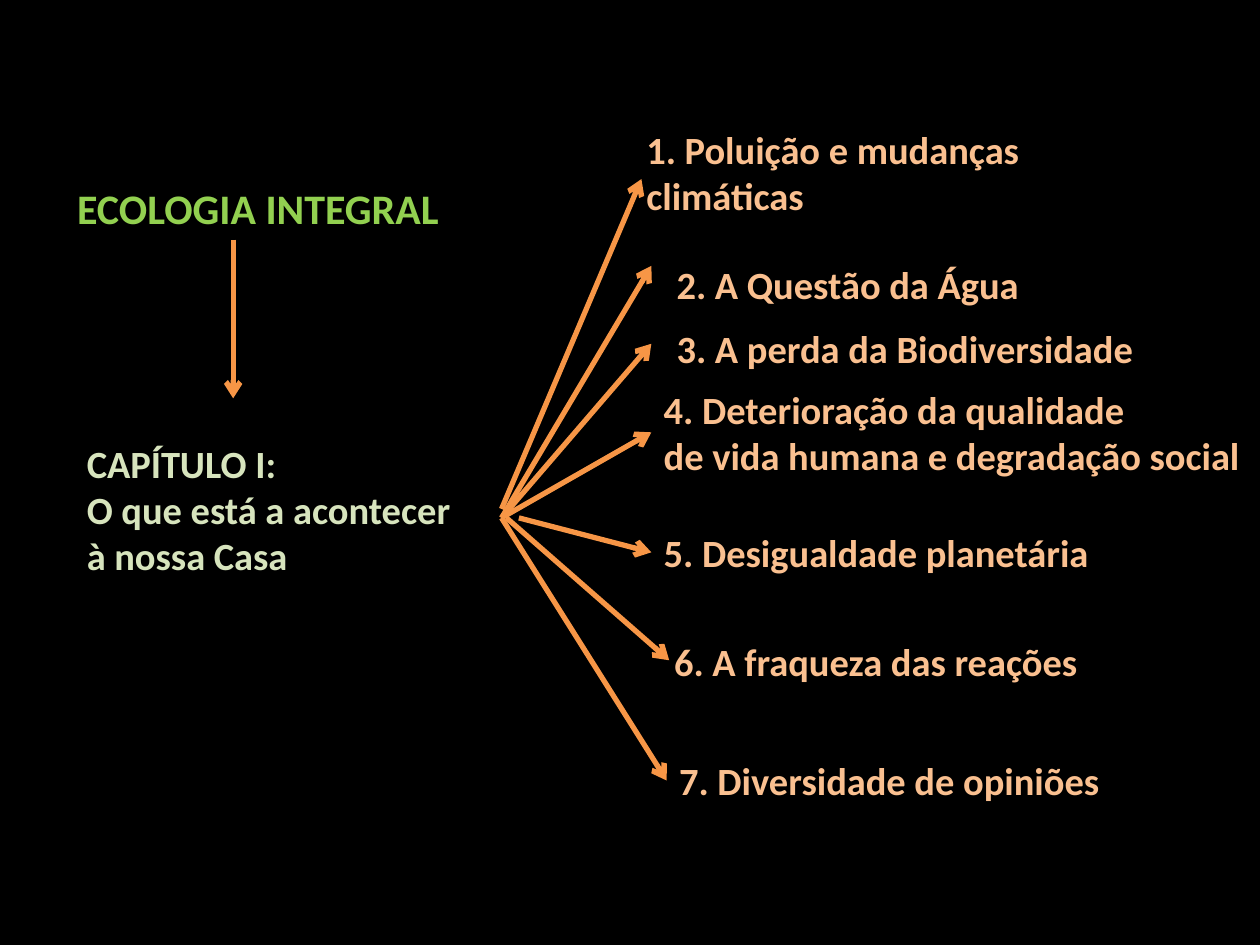
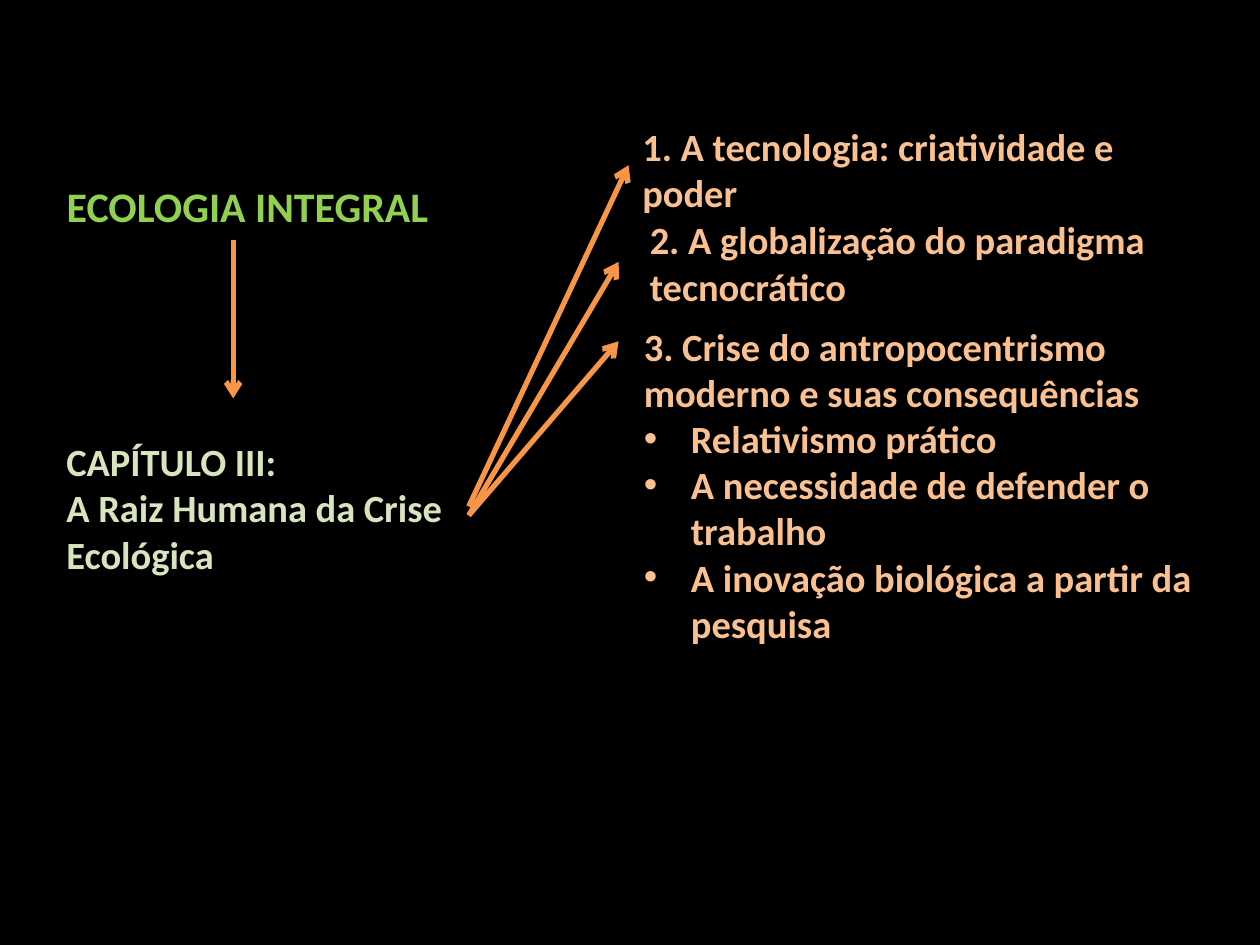
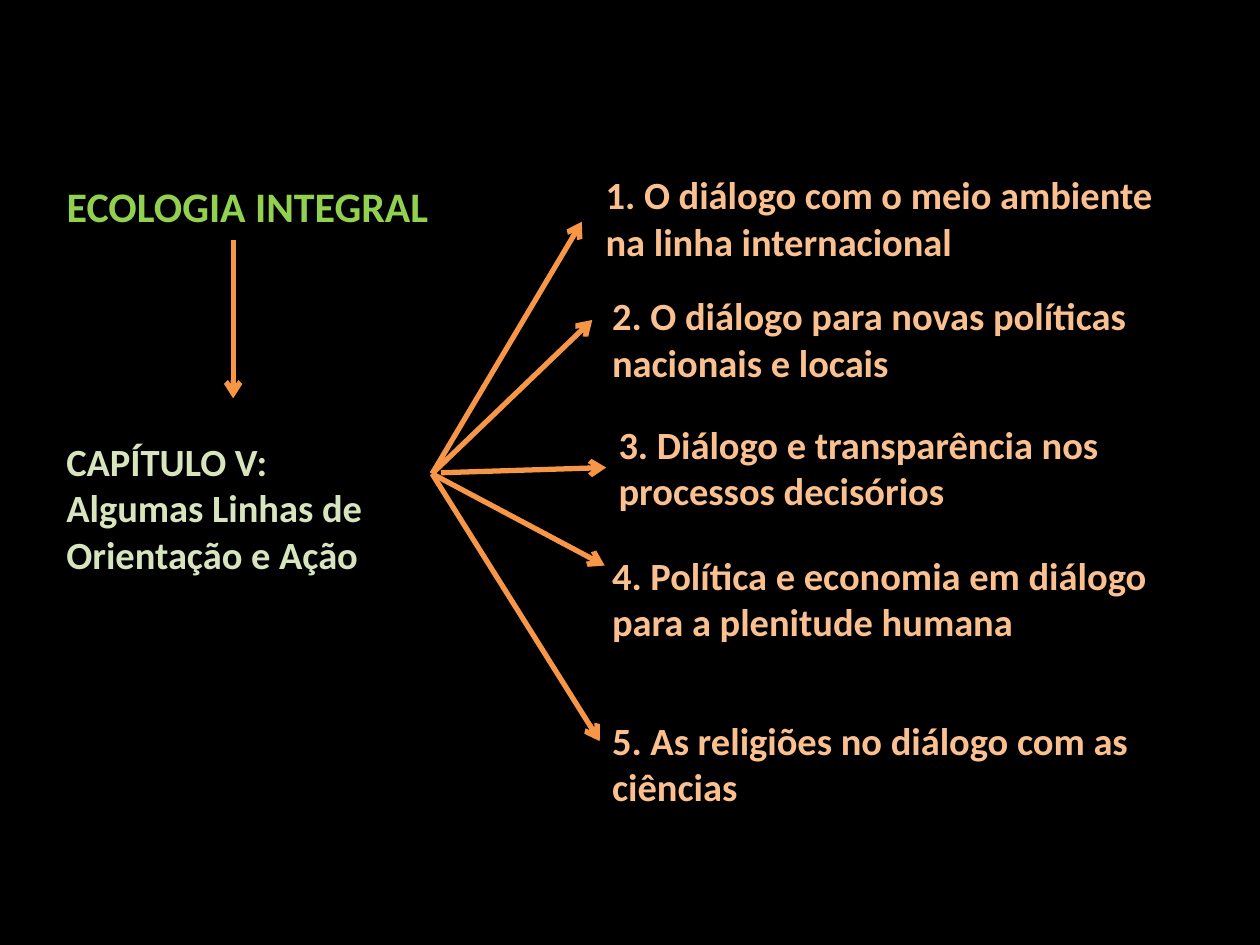
from dataclasses import dataclass
from pptx import Presentation
from pptx.dml.color import RGBColor
from pptx.enum.shapes import MSO_CONNECTOR
from pptx.enum.text import MSO_ANCHOR, MSO_AUTO_SIZE, PP_ALIGN
from pptx.oxml.ns import qn
from pptx.util import Cm, Pt
from lxml import etree

BLACK = RGBColor(0x00, 0x00, 0x00)
GREEN = RGBColor(0x92, 0xD0, 0x50)
PALE_GREEN = RGBColor(0xD7, 0xE4, 0xBD)
PEACH = RGBColor(0xFA, 0xC0, 0x90)
ORANGE = RGBColor(0xF7, 0x96, 0x46)

STRAIGHT = MSO_CONNECTOR.STRAIGHT
TOP = MSO_ANCHOR.TOP
LEFT = PP_ALIGN.LEFT
GROW = MSO_AUTO_SIZE.SHAPE_TO_FIT_TEXT
LEFT_SIDE = 1

TITLE = "ECOLOGIA INTEGRAL"
TITLE_SIZE = (8.61, 1.27)
DOWN_ARROW = ((4.7, 4.83), (4.7, 8.03))
LINE_HEIGHT = 0.94
PADDING = 0.25
BULLET_INDENT = 0.95


@dataclass
class Topic:
    text: str
    left: float
    top: float
    width: float
    start: tuple
    end: tuple = None
    lines: int = 2
    wrap: bool = True
    bullets: tuple = ()


@dataclass
class Chapter:
    title_at: tuple
    at: tuple
    width: float
    paragraphs: tuple
    topics: list


FAN_1, FAN_2, FAN_3 = (10.11, 10.44), (9.45, 10.39), (8.71, 9.55)

CHAPTERS = [
    Chapter((1.3, 3.56), (1.5, 8.74), 10.39,
            ("CAPÍTULO I:", "O que está a acontecer\nà nossa Casa"), [
        Topic("1. Poluição e mudanças climáticas", 12.78, 2.41, 10.39,
              (10.11, 10.26), (12.93, 3.61)),
        Topic("2. A Questão da Água", 13.39, 5.13, 7.49,
              FAN_1, (13.13, 5.36), lines=1, wrap=False),
        Topic("3. A perda da Biodiversidade", 13.39, 6.43, 9.83,
              FAN_1, (13.13, 6.93), lines=1, wrap=False),
        Topic("4. Deterioração da qualidade\nde vida humana e degradação social",
              13.13, 7.65, 12.27, FAN_1, wrap=False),
        Topic("5. Desigualdade planetária", 13.13, 10.54, 9.17,
              (10.46, 10.44), lines=1, wrap=False),
        Topic("6. A fraqueza das reações", 13.34, 12.73, 8.76,
              (10.21, 10.44), (13.49, 13.31), lines=1, wrap=False),
        Topic("7. Diversidade de opiniões", 13.44, 15.14, 9.09,
              FAN_1, lines=1, wrap=False),
    ]),
    Chapter((1.09, 3.51), (1.09, 8.71), 9.35,
            ("CAPÍTULO III:", "A Raiz Humana da Crise\nEcológica"), [
        Topic("1. A tecnologia: criatividade e poder", 12.7, 2.36, 10.39,
              (9.45, 10.21), (12.67, 3.33)),
        Topic("2. A globalização do paradigma\ntecnocrático", 12.85, 4.24, 11.25,
              FAN_2, (12.47, 5.28)),
        Topic("3. Crise do antropocentrismo moderno e suas consequências",
              12.73, 6.38, 12.17, FAN_2, (12.47, 6.88), lines=7,
              bullets=("Relativismo prático",
                       "A necessidade de defender o trabalho",
                       "A inovação biológica a partir da pesquisa")),
    ]),
    Chapter((1.09, 3.51), (1.09, 8.71), 9.35,
            ("CAPÍTULO V:", "Algumas Linhas de\nOrientação e Ação"), [
        Topic("1. O diálogo com o meio ambiente na linha internacional",
              11.96, 3.33, 12.19, FAN_3, (11.73, 4.47)),
        Topic("2. O diálogo para novas políticas nacionais e locais",
              12.09, 5.77, 11.25, FAN_3, (11.94, 6.45)),
        Topic("3. Diálogo e transparência nos processos decisórios",
              12.22, 8.36, 11.94, (8.89, 9.53)),
        Topic("4. Política e economia em diálogo para a plenitude humana",
              12.09, 11, 11.99, FAN_3, (12.19, 11.4)),
        Topic("5. As religiões no diálogo com as ciências",
              12.09, 14.33, 12.67, FAN_3, (12.09, 14.94)),
    ]),
]


class Deck:
    def __init__(self):
        self.prs = Presentation()
        self.prs.slide_width, self.prs.slide_height = Cm(25.4), Cm(19.05)
        fill = self.prs.slide_master.background.fill
        fill.solid()
        fill.fore_color.rgb = BLACK
        self.s = None

    def add_slide(self):
        self.s = self.prs.slides.add_slide(self.prs.slide_layouts[5])

    def fill_text(self, sp, paragraphs, color, size=22, wrap=True):
        tf = sp.text_frame
        frame = {"word_wrap": wrap, "auto_size": GROW, "vertical_anchor": TOP}
        for name, value in frame.items():
            setattr(tf, name, value)
        font = {"name": "Calibri", "size": Pt(size), "bold": True}
        for i, text in enumerate(paragraphs):
            p = tf.paragraphs[0] if i == 0 else tf.add_paragraph()
            p.text = text
            p.alignment = LEFT
            for r in p.runs:
                for name, value in font.items():
                    setattr(r.font, name, value)
                r.font.color.rgb = color

    def title(self, at):
        sp = self.s.shapes.title
        sp.left, sp.top, sp.width, sp.height = map(Cm, at + TITLE_SIZE)
        self.fill_text(sp, [TITLE], GREEN, size=24)

    def text(self, left, top, width, lines, paragraphs, color, wrap=True):
        height = PADDING + lines * LINE_HEIGHT
        sp = self.s.shapes.add_textbox(*map(Cm, (left, top, width, height)))
        self.fill_text(sp, paragraphs, color, wrap=wrap)
        return sp

    def bullet(self, p):
        pPr = p._p.get_or_add_pPr()
        pPr.set("marL", str(Cm(BULLET_INDENT)))
        pPr.set("indent", str(-Cm(BULLET_INDENT)))
        etree.SubElement(pPr, qn("a:buFont")).set("typeface", "Arial")
        etree.SubElement(pPr, qn("a:buChar")).set("char", "•")

    def arrow(self, start, end, target=None):
        c = self.s.shapes.add_connector(STRAIGHT, *map(Cm, start + end))
        if target is not None:
            c.end_connect(target, LEFT_SIDE)
        c.line.color.rgb = ORANGE
        c.line.width = Pt(3)
        etree.SubElement(c.line._get_or_add_ln(), qn("a:tailEnd")).set("type", "arrow")
        etree.SubElement(c._element.spPr, qn("a:effectLst"))

    def topic(self, t):
        sp = self.text(t.left, t.top, t.width, t.lines,
                       (t.text,) + t.bullets, PEACH, t.wrap)
        for p in sp.text_frame.paragraphs[1:]:
            self.bullet(p)
        if t.end:
            self.arrow(t.start, t.end)
        else:
            self.arrow(t.start, (t.left, t.top), sp)

    def chapter(self, ch):
        self.add_slide()
        self.title(ch.title_at)
        self.arrow(*DOWN_ARROW)
        self.text(*ch.at, ch.width, 3, ch.paragraphs, PALE_GREEN)
        for t in ch.topics:
            self.topic(t)


def main():
    deck = Deck()
    for ch in CHAPTERS:
        deck.chapter(ch)
    deck.prs.save("out.pptx")


if __name__ == "__main__":
    main()
